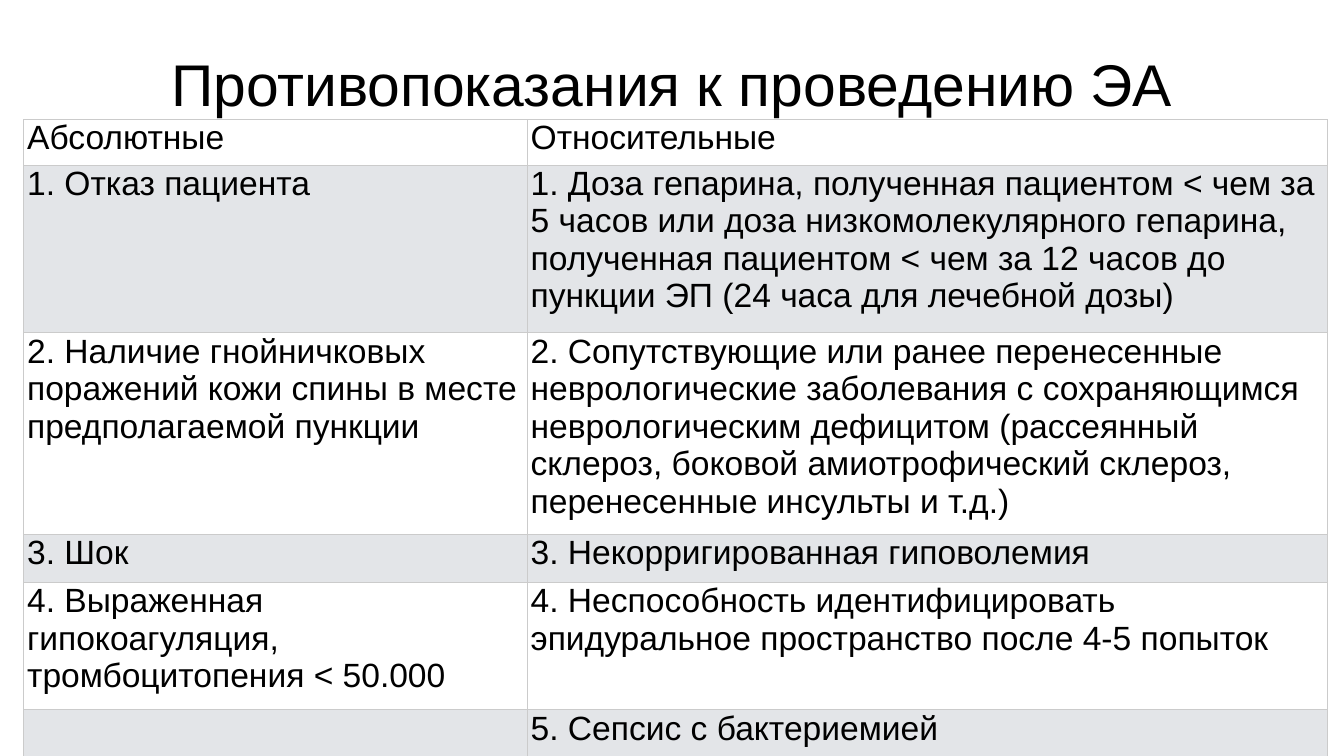
import pptx
import pptx.dml.color
import pptx.enum.text
import pptx.oxml
import pptx.oxml.ns
import pptx.util

Pt = pptx.util.Pt
FONT = "Arial"
BLACK, WHITE, BAND, BORDER = "000000", "FFFFFF", "E3E5E8", "CBCBCB"
COLUMN_WIDTHS = [719.3, 1142.6]
ROW_HEIGHTS = [64.8, 239.8, 283, 68.4, 182.2, 67.7]
ROWS = [
    ("Абсолютные", "Относительные"),
    ("1. Отказ пациента",
     "1. Доза гепарина, полученная пациентом < чем за 5 часов или доза "
     "низкомолекулярного гепарина, полученная пациентом < чем за 12 часов "
     "до пункции ЭП (24 часа для лечебной дозы)"),
    ("2. Наличие гнойничковых поражений кожи спины в месте предполагаемой пункции",
     "2. Сопутствующие или ранее перенесенные неврологические заболевания с "
     "сохраняющимся неврологическим дефицитом (рассеянный склероз, боковой "
     "амиотрофический склероз, перенесенные инсульты и т.д.)"),
    ("3. Шок", "3. Некорригированная гиповолемия"),
    ("4. Выраженная гипокоагуляция, тромбоцитопения < 50.000",
     "4. Неспособность идентифицировать эпидуральное пространство после 4-5 попыток"),
    ("", "5. Сепсис с бактериемией"),
]


def color(value):
    return pptx.dml.color.RGBColor.from_string(value)


def add_run(para, text, size):
    span = para.add_run()
    span.text = text
    span.font.name = FONT
    span.font.size = Pt(size)
    span.font.color.rgb = color(BLACK)


def set_margins(target, horizontal, vertical):
    target.margin_left = target.margin_right = Pt(horizontal)
    target.margin_top = target.margin_bottom = Pt(vertical)


def add_title(page, text):
    box = page.shapes.add_textbox(Pt(133.2), Pt(28.1), Pt(1653.8), Pt(180))
    frame = box.text_frame
    frame.word_wrap = True
    frame.vertical_anchor = pptx.enum.text.MSO_ANCHOR.MIDDLE
    set_margins(frame, 4.3, 4.3)
    para = frame.paragraphs[0]
    para.alignment = pptx.enum.text.PP_ALIGN.CENTER
    add_run(para, text, 84)


def set_borders(cell):
    """Draw a thin line on all four sides; lines must precede the fill."""
    properties = cell._tc.get_or_add_tcPr()
    for index, side in enumerate(("lnL", "lnR", "lnT", "lnB")):
        line = pptx.oxml.parse_xml(
            f'<a:{side} {pptx.oxml.ns.nsdecls("a")} w="{Pt(0.5)}"><a:solidFill>'
            f'<a:srgbClr val="{BORDER}"/></a:solidFill></a:{side}>')
        properties.insert(index, line)


def fill_cell(cell, text, background):
    set_margins(cell, 5, 0)
    cell.fill.solid()
    cell.fill.fore_color.rgb = color(background)
    set_borders(cell)
    if text:
        add_run(cell.text_frame.paragraphs[0], text, 48)


def add_contraindications(page):
    frame = page.shapes.add_table(
        len(ROWS), len(COLUMN_WIDTHS), Pt(33.8), Pt(170.6),
        Pt(sum(COLUMN_WIDTHS)), Pt(sum(ROW_HEIGHTS)))
    table = frame.table
    for column, width in zip(table.columns, COLUMN_WIDTHS):
        column.width = Pt(width)
    for row_index, (texts, height) in enumerate(zip(ROWS, ROW_HEIGHTS)):
        table.rows[row_index].height = Pt(height)
        background = BAND if row_index % 2 else WHITE
        for column_index, text in enumerate(texts):
            fill_cell(table.cell(row_index, column_index), text, background)


def main():
    deck = pptx.Presentation()
    deck.slide_width, deck.slide_height = Pt(1920), Pt(1080)
    page = deck.slides.add_slide(deck.slide_layouts[6])
    page.background.fill.solid()
    page.background.fill.fore_color.rgb = color(WHITE)
    add_title(page, "Противопоказания к проведению ЭА")
    add_contraindications(page)
    deck.save("out.pptx")


if __name__ == "__main__":
    main()
